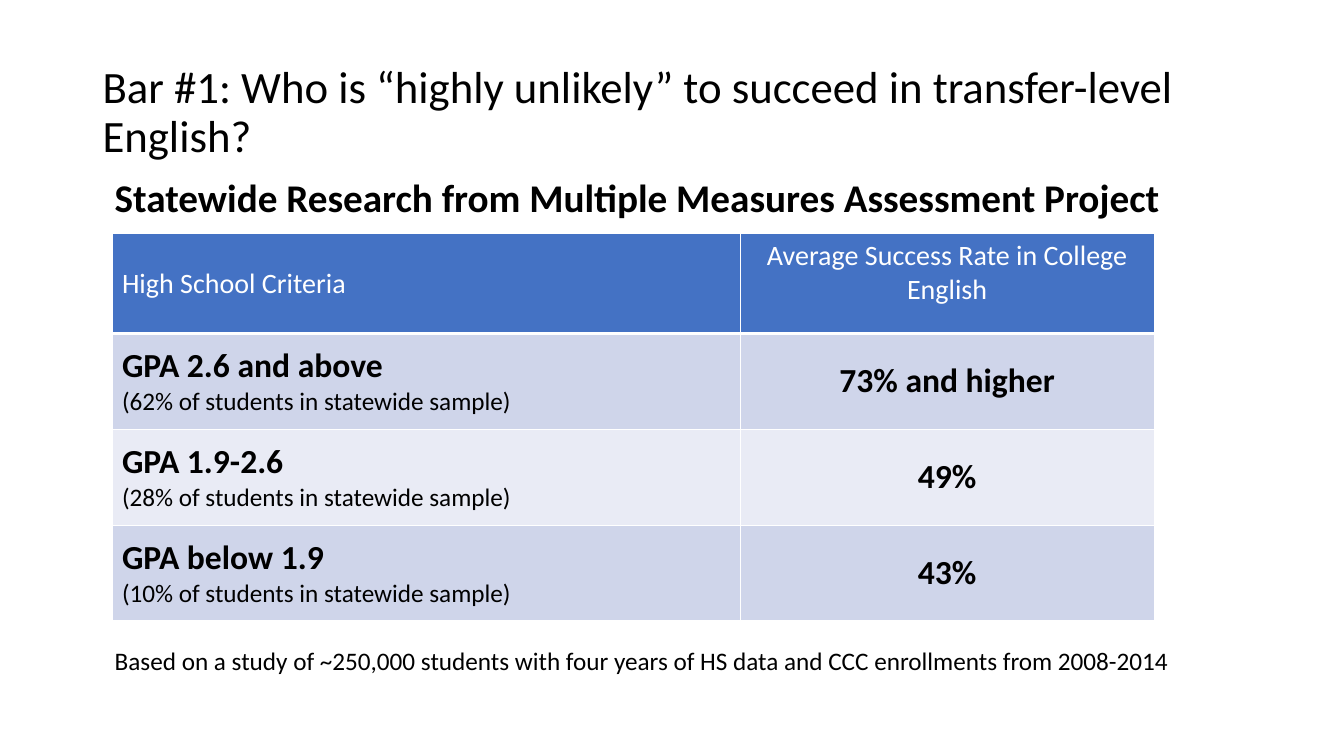
import pptx
import pptx.dml.color
import pptx.enum.text
import pptx.oxml
import pptx.oxml.ns
import pptx.util

SLIDE_WIDTH = pptx.util.Inches(13.333)
SLIDE_HEIGHT = pptx.util.Inches(7.5)
COLORS = {
    "ink": "000000",
    "white": "FFFFFF",
    "header": "4472C4",
    "odd_band": "CFD5EA",
    "even_band": "E9EBF5",
}
ALIGN = pptx.enum.text.PP_ALIGN
ANCHOR = pptx.enum.text.MSO_ANCHOR
AUTO_SIZE = pptx.enum.text.MSO_AUTO_SIZE

COLUMN_SHARES = [46.74, 30.81]
HEADER_SHARE = 13.2
BAND_SHARE = 12.67
HEADINGS = ["High School Criteria", "Average Success Rate in College English"]
SUCCESS_RATES = [
    ("GPA 2.6 and above", "62%", "73% and higher"),
    ("GPA 1.9-2.6", "28%", "49%"),
    ("GPA below 1.9", "10%", "43%"),
]


def across(percent):
    """Turn a percentage of the slide width into a length."""
    return round(SLIDE_WIDTH * percent / 100)


def down(percent):
    """Turn a percentage of the slide height into a length."""
    return round(SLIDE_HEIGHT * percent / 100)


def area(left, top, width, height):
    """Give a box in lengths from percentages of the slide."""
    return across(left), down(top), across(width), down(height)


def rgb(color):
    """Look up a named colour."""
    return pptx.dml.color.RGBColor.from_string(COLORS[color])


def write(frame, text, size=18, bold=False, color="ink", align=ALIGN.LEFT,
          spacing=None, added=False):
    """Write one formatted paragraph into a text frame."""
    paragraph = frame.add_paragraph() if added else frame.paragraphs[0]
    paragraph.alignment = align
    if spacing:
        paragraph.line_spacing = spacing
    run = paragraph.add_run()
    run.text = text
    run.font.name = "Calibri"
    run.font.size = pptx.util.Pt(size)
    run.font.bold = bold
    run.font.color.rgb = rgb(color)


def add_title(slide, text):
    """Place and format the title placeholder."""
    title = slide.shapes.title
    title.left, title.top, title.width, title.height = area(6.88, 5.33, 86.25, 19.33)
    title.text_frame.auto_size = AUTO_SIZE.NONE
    title.text_frame.vertical_anchor = ANCHOR.MIDDLE
    write(title.text_frame, text, size=32, spacing=0.9)


def add_text(slide, box, text, wrap=True, **text_format):
    """Add a text box holding one paragraph."""
    frame = slide.shapes.add_textbox(*area(*box)).text_frame
    frame.word_wrap = wrap
    frame.auto_size = AUTO_SIZE.NONE if wrap else AUTO_SIZE.SHAPE_TO_FIT_TEXT
    write(frame, text, **text_format)


def style_cell(cell, fill, anchor=ANCHOR.MIDDLE, bottom=1):
    """Fill a cell and rule its four sides in white."""
    cell.fill.solid()
    cell.fill.fore_color.rgb = rgb(fill)
    cell.vertical_anchor = anchor
    properties = cell._tc.get_or_add_tcPr()
    for position, side in enumerate("LRTB"):
        weight = pptx.util.Pt(bottom if side == "B" else 1)
        properties.insert(position, pptx.oxml.parse_xml(
            f'<a:ln{side} {pptx.oxml.ns.nsdecls("a")} w="{weight}"><a:solidFill>'
            f'<a:srgbClr val="{COLORS["white"]}"/></a:solidFill></a:ln{side}>'))


def add_success_table(slide):
    """Add the success rates for each band of school grades."""
    row_shares = [HEADER_SHARE] + [BAND_SHARE] * len(SUCCESS_RATES)
    box = area(8.33, 30.93, sum(COLUMN_SHARES), sum(row_shares))
    table = slide.shapes.add_table(len(row_shares), len(COLUMN_SHARES), *box).table
    for column, share in zip(table.columns, COLUMN_SHARES):
        column.width = across(share)
    for row, share in zip(table.rows, row_shares):
        row.height = down(share)

    header_formats = [(ANCHOR.MIDDLE, ALIGN.LEFT), (ANCHOR.TOP, ALIGN.CENTER)]
    for index, (heading, (anchor, align)) in enumerate(zip(HEADINGS, header_formats)):
        cell = table.cell(0, index)
        style_cell(cell, "header", anchor, bottom=3)
        write(cell.text_frame, heading, size=20, color="white", align=align)

    for index, (grades, sample, rate) in enumerate(SUCCESS_RATES, start=1):
        criteria_cell, rate_cell = table.cell(index, 0), table.cell(index, 1)
        for cell in (criteria_cell, rate_cell):
            style_cell(cell, "odd_band" if index % 2 else "even_band")
        write(criteria_cell.text_frame, grades, size=24, bold=True)
        write(criteria_cell.text_frame, f"({sample} of students in statewide sample)",
              added=True)
        write(rate_cell.text_frame, rate, size=24, bold=True, align=ALIGN.CENTER)


def main():
    """Build and save the slide."""
    deck = pptx.Presentation()
    deck.slide_width, deck.slide_height = SLIDE_WIDTH, SLIDE_HEIGHT
    slide = deck.slides.add_slide(deck.slide_layouts.get_by_name("Title Only"))
    add_title(slide, "Bar #1: Who is “highly unlikely” to succeed in "
                     "transfer-level English?")
    add_text(slide, (7.8, 22.93, 83.4, 66.4),
             "Statewide Research from Multiple Measures Assessment Project",
             size=28, bold=True, spacing=0.9)
    add_success_table(slide)
    add_text(slide, (7.8, 84.67, 80.4, 9.47),
             "Based on a study of ~250,000 students with four years of HS data "
             "and CCC enrollments from 2008-2014", wrap=False)
    deck.save("out.pptx")


if __name__ == "__main__":
    main()
